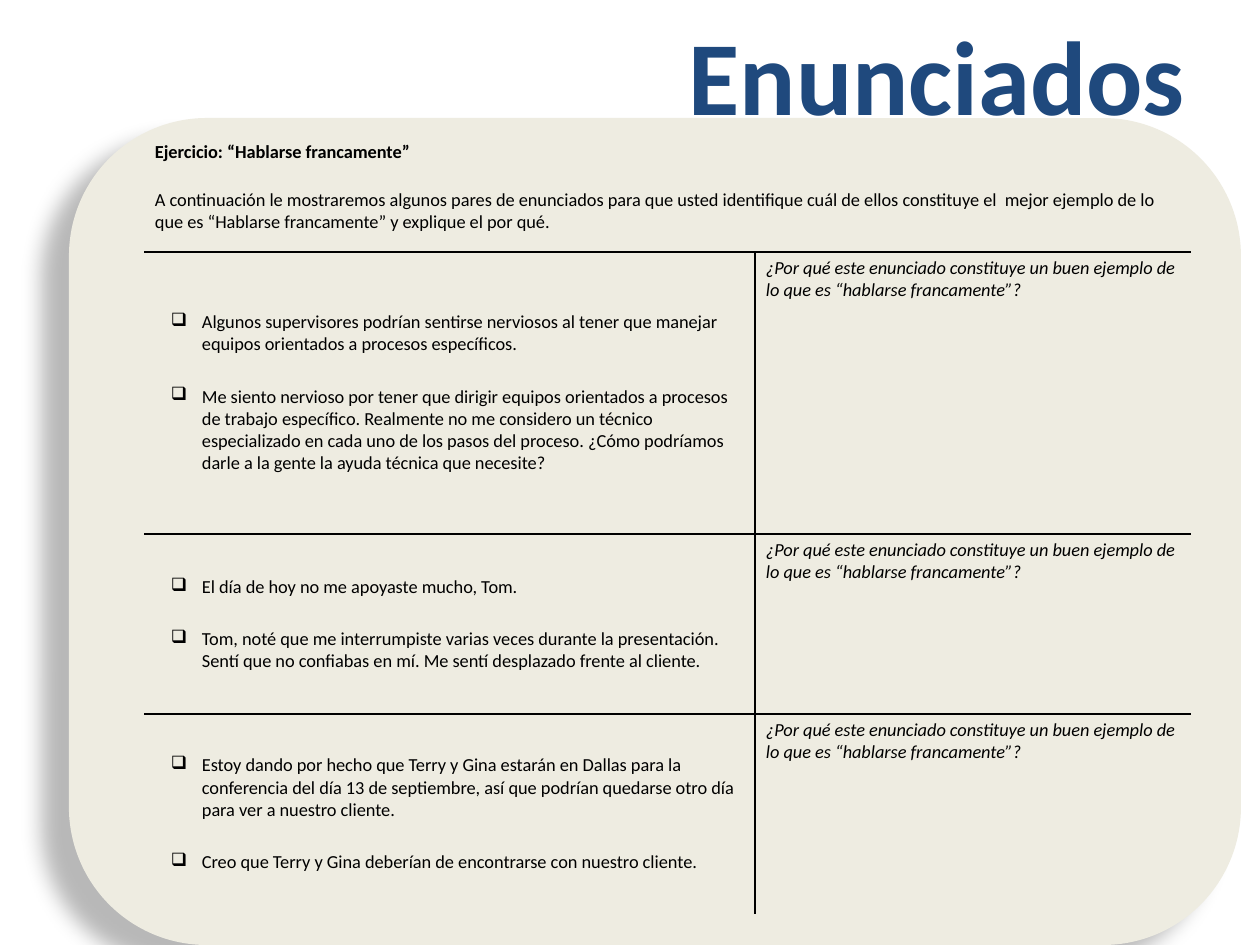
from lxml.etree import SubElement
from pptx import Presentation
from pptx.dml.color import RGBColor
from pptx.enum.shapes import MSO_SHAPE
from pptx.enum.text import MSO_ANCHOR, MSO_AUTO_SIZE, PP_ALIGN
from pptx.oxml import parse_xml
from pptx.oxml.ns import nsdecls, qn
from pptx.util import Pt

PX = 914400 // 126
INK = "000000"
QUESTION = ("¿Por qué este enunciado constituye un buen ejemplo de "
            "lo que es “hablarse francamente”?")
INTRO = [
    "Ejercicio: “Hablarse francamente”",
    "A continuación le mostraremos algunos pares de enunciados para que usted "
    "identifique cuál de ellos constituye el  mejor ejemplo de lo que es "
    "“Hablarse francamente” y explique el por qué.",
]
STATEMENT_PAIRS = [
    ["Algunos supervisores podrían sentirse nerviosos al tener que manejar "
     "equipos orientados a procesos específicos.",
     "Me siento nervioso por tener que dirigir equipos orientados a procesos de "
     "trabajo específico. Realmente no me considero un técnico especializado en "
     "cada uno de los pasos del proceso. ¿Cómo podríamos darle a la gente la "
     "ayuda técnica que necesite?"],
    ["El día de hoy no me apoyaste mucho, Tom.",
     "Tom, noté que me interrumpiste varias veces durante la presentación. Sentí "
     "que no confiabas en mí. Me sentí desplazado frente al cliente."],
    ["Estoy dando por hecho que Terry y Gina estarán en Dallas para la "
     "conferencia del día 13 de septiembre, así que podrían quedarse otro día "
     "para ver a nuestro cliente.",
     "Creo que Terry y Gina deberían de encontrarse con nuestro cliente."],
]


def color(hex_code):
    return RGBColor.from_string(hex_code)


def fill_cell(cell, texts, borders, gap=0, bold_first=False, italic=False, bullet=None):
    """Write one paragraph per text and rule the given sides (L, R, T, B)."""
    cell.margin_left = cell.margin_right = 11 * PX
    cell.margin_top = cell.margin_bottom = 5 * PX
    frame = cell.text_frame
    frame.text = "\n".join(texts)
    for index, paragraph in enumerate(frame.paragraphs):
        if index:
            paragraph.space_before = Pt(gap)
        if bullet:
            properties = paragraph._p.get_or_add_pPr()
            properties.set("marL", str(47 * PX))
            properties.set("indent", str(-31 * PX))
            SubElement(properties, qn("a:buChar"), char=bullet)
        paragraph.font.name = "Calibri"
        paragraph.font.size = Pt(10.5)
        paragraph.font.bold = bold_first and index == 0
        paragraph.font.italic = italic
        paragraph.font.color.rgb = color(INK)
    for side in borders:
        cell._tc.get_or_add_tcPr().append(parse_xml(
            f'<a:ln{side} {nsdecls("a")} w="12700"><a:solidFill>'
            f'<a:srgbClr val="{INK}"/></a:solidFill></a:ln{side}>'))
    cell.fill.background()


presentation = Presentation()
presentation.slide_width = 1260 * PX
presentation.slide_height = 945 * PX
slide = presentation.slides.add_slide(presentation.slide_layouts[5])

# Title
title = slide.shapes.title
title.left, title.top, title.width, title.height = 673 * PX, 0, 528 * PX, 88 * PX
heading = title.text_frame
heading.text = "Enunciados"
heading.auto_size = MSO_AUTO_SIZE.NONE
heading.word_wrap = True
heading.vertical_anchor = MSO_ANCHOR.TOP
heading.margin_top = 10 * PX
heading_line = heading.paragraphs[0]
heading_line.alignment = PP_ALIGN.CENTER
heading_line.font.name = "Calibri"
heading_line.font.size = Pt(60)
heading_line.font.bold = True
heading_line.font.color.rgb = color("1F497D")

# Rounded card with a soft shadow to the lower left
card = slide.shapes.add_shape(MSO_SHAPE.ROUNDED_RECTANGLE,
                              69 * PX, 118 * PX, 1172 * PX, 827 * PX)
card.fill.solid()
card.fill.fore_color.rgb = color("EEECE1")
card.line.fill.background()
card.shadow.inherit = False
effects = card._element.spPr.find(qn("a:effectLst"))
effects.append(parse_xml(
    f'<a:outerShdw {nsdecls("a")} blurRad="{Pt(11.8)}" dist="{Pt(19.7)}" '
    f'dir="{141 * 60000}" rotWithShape="0"><a:srgbClr val="{INK}">'
    '<a:alpha val="28000"/></a:srgbClr></a:outerShdw>'))

# Exercise table, without a built-in style
column_widths = [611, 436]
row_heights = [116, 282, 180, 200]
exercise = slide.shapes.add_table(
    len(row_heights), len(column_widths), 144 * PX, 136 * PX,
    sum(column_widths) * PX, sum(row_heights) * PX).table
exercise.first_row = exercise.horz_banding = False
exercise._tbl.tblPr.find(qn("a:tableStyleId")).text = "{2D5ABB26-0587-4C30-8999-92F81FD0307C}"
for column, width in zip(exercise.columns, column_widths):
    column.width = width * PX
for row, height in zip(exercise.rows, row_heights):
    row.height = height * PX

# Instructions across the top
exercise.cell(0, 0).merge(exercise.cell(0, 1))
fill_cell(exercise.cell(0, 0), INTRO, "B", gap=14.5, bold_first=True)
fill_cell(exercise.cell(0, 1), [""], "B")

# Statement pairs on the left, the question on the right
for number, pair in enumerate(STATEMENT_PAIRS, start=1):
    rules = "T" if number == len(STATEMENT_PAIRS) else "TB"
    statements = exercise.cell(number, 0)
    fill_cell(statements, pair, "R" + rules, gap=17, bullet="❑")
    statements.vertical_anchor = MSO_ANCHOR.MIDDLE
    fill_cell(exercise.cell(number, 1), [QUESTION], "L" + rules, italic=True)

presentation.save("out.pptx")
